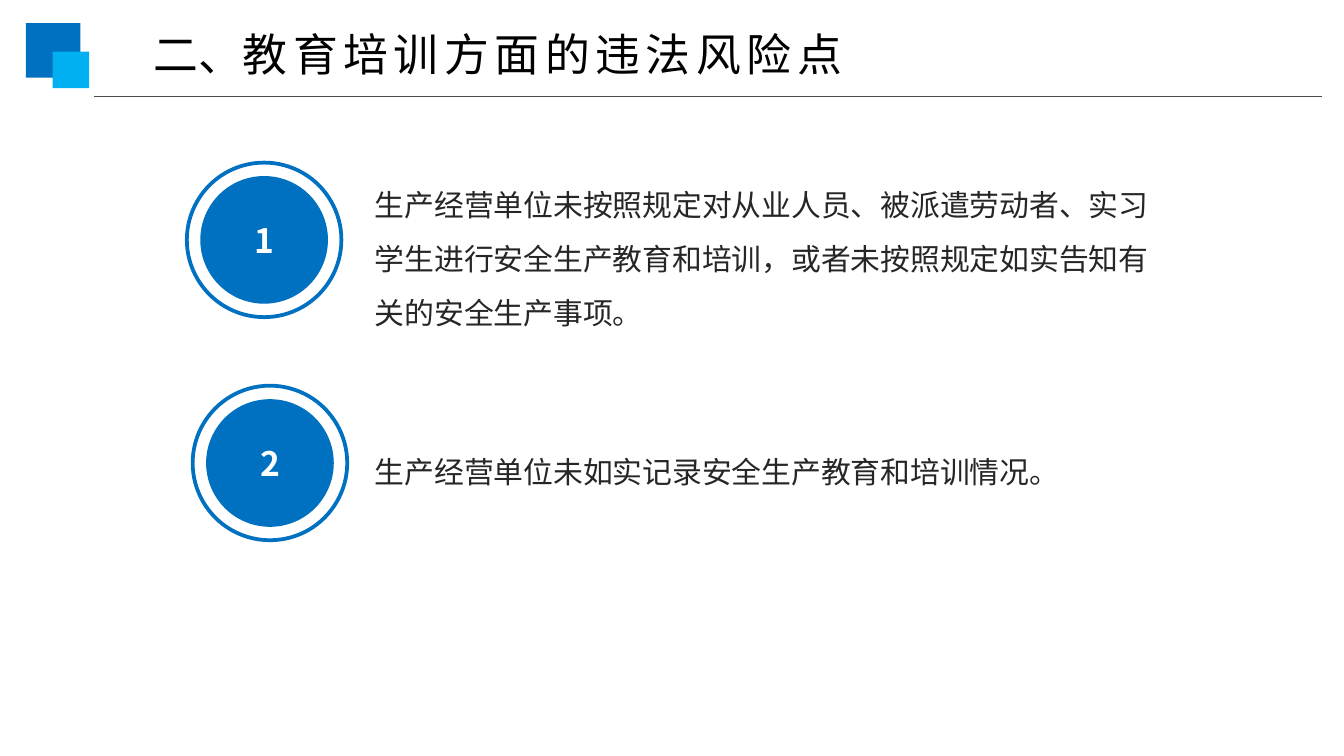
import pptx
import pptx.dml.color
import pptx.enum.shapes
import pptx.enum.text
import pptx.oxml.ns
import pptx.util
from dataclasses import dataclass
from lxml import etree

Pt = pptx.util.Pt
Shape = pptx.enum.shapes.MSO_SHAPE
Align = pptx.enum.text.PP_ALIGN
Anchor = pptx.enum.text.MSO_ANCHOR


@dataclass(frozen=True)
class Theme:
    font: str = "Noto Sans CJK SC"
    blue: str = "0070C0"
    sky: str = "00B0F0"
    rule: str = "4D4948"
    title: str = "000000"
    body: str = "262626"
    white: str = "FFFFFF"
    title_size: int = 24
    number_size: int = 18
    body_size: int = 16


THEME = Theme()

# Number, left and top of the ring, top of the text, text
RISKS = [
    ("1", 100.08, 87.12, 87.12,
     "生产经营单位未按照规定对从业人员、被派遣劳动者、实习学生进行安全生产教育和培训，"
     "或者未按照规定如实告知有关的安全生产事项。"),
    ("2", 103.2, 206.64, 229.68, "生产经营单位未如实记录安全生产教育和培训情况。"),
]
RING_SIZE = 82.8
DISC_SIZE = 68.4


def color(code):
    return pptx.dml.color.RGBColor.from_string(code)


def add_span(para, text, size, code, bold=False, spacing=0):
    span = para.add_run()
    span.text = text
    span.font.size = Pt(size)
    span.font.bold = bold
    span.font.color.rgb = color(code)
    span.font.name = THEME.font
    properties = span.font._element
    east_asian = etree.SubElement(properties, pptx.oxml.ns.qn("a:ea"))
    east_asian.set("typeface", THEME.font)
    if spacing:
        properties.set("spc", str(spacing * 100))


def add_figure(page, kind, left, top, size, fill=None, line=None):
    figure = page.shapes.add_shape(kind, Pt(left), Pt(top), Pt(size), Pt(size))
    figure.shadow.inherit = False
    if fill:
        figure.fill.solid()
        figure.fill.fore_color.rgb = color(fill)
    else:
        figure.fill.background()
    if line:
        figure.line.color.rgb = color(line)
        figure.line.width = Pt(2)
    else:
        figure.line.fill.background()
    return figure


def add_header(page):
    # Corner squares
    add_figure(page, Shape.RECTANGLE, 13.9, 12.4, 40.8 - 11.6, THEME.blue)
    add_figure(page, Shape.RECTANGLE, 28.2, 27.6, 19.6, THEME.sky)

    # Rule under the title
    rule = page.shapes.add_connector(
        pptx.enum.shapes.MSO_CONNECTOR.STRAIGHT, Pt(50.4), Pt(51.6), Pt(708), Pt(51.6))
    rule.line.color.rgb = color(THEME.rule)
    rule.line.width = Pt(0.75)
    etree.SubElement(rule._element.spPr, pptx.oxml.ns.qn("a:effectLst"))

    # Title
    title = page.shapes.title
    title.left, title.top, title.width, title.height = Pt(74.9), Pt(10.8), Pt(519), Pt(36)
    frame = title.text_frame
    frame.vertical_anchor = Anchor.TOP
    frame.auto_size = pptx.enum.text.MSO_AUTO_SIZE.NONE
    para = frame.paragraphs[0]
    para.alignment = Align.LEFT
    para.line_spacing = 1.0
    para.space_before = Pt(0)
    add_span(para, "二、", THEME.title_size, THEME.title)
    add_span(para, "教育培训方面的违法风险点", THEME.title_size, THEME.title, spacing=3)


def add_badge(page, number, left, top):
    inset = (RING_SIZE - DISC_SIZE) / 2
    disc = add_figure(page, Shape.OVAL, left + inset, top + inset, DISC_SIZE, THEME.blue)
    disc.text_frame.vertical_anchor = Anchor.MIDDLE
    para = disc.text_frame.paragraphs[0]
    para.alignment = Align.CENTER
    add_span(para, number, THEME.number_size, THEME.white, bold=True)
    add_figure(page, Shape.OVAL, left, top, RING_SIZE, line=THEME.blue)


def add_body(page, text, top, height):
    box = page.shapes.add_textbox(Pt(193.7), Pt(top), Pt(438.5), Pt(height))
    box.text_frame.word_wrap = True
    para = box.text_frame.paragraphs[0]
    para.line_spacing = 1.5
    add_span(para, text, THEME.body_size, THEME.body)


def main():
    deck = pptx.Presentation()
    deck.slide_width, deck.slide_height = Pt(720), Pt(405)
    page = deck.slides.add_slide(deck.slide_layouts[5])
    add_header(page)

    # Numbered risks
    for number, left, top, text_top, text in RISKS:
        add_badge(page, number, left, top)
        add_body(page, text, text_top, 94.3 if len(text) > 26 else 36)

    deck.save("out.pptx")


if __name__ == "__main__":
    main()
